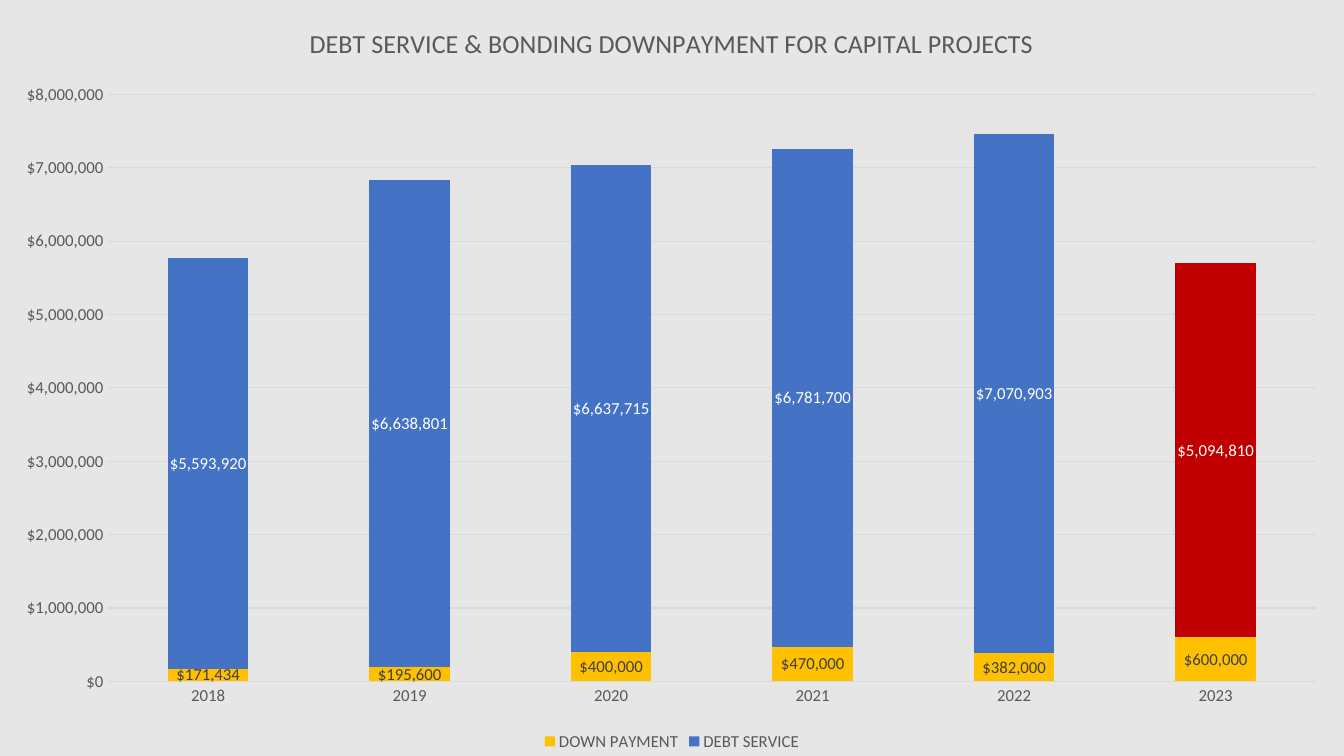
from pptx import Presentation
from pptx import util as u
from pptx.chart.data import CategoryChartData
from pptx.dml.color import RGBColor
from pptx.enum import chart as ch
from pptx.oxml import parse_xml
from pptx.oxml.ns import nsdecls

SCALE = 12192000 / 1344  # EMU in one px
WIDE, HIGH = 1344, 756
GREY, BACK = "595959", "E7E6E6"


def px(n):
    return u.Emu(round(n * SCALE))


def style(font, size, color):
    font.name, font.size, font.bold = "Calibri", u.Pt(size), False
    font.color.rgb = RGBColor.from_string(color)


prs = Presentation()
prs.slide_width, prs.slide_height = px(WIDE), px(HIGH)
slide = prs.slides.add_slide(prs.slide_layouts[6])

# Stacked columns over the whole slide
data = CategoryChartData(number_format='"$"#,##0')
data.categories = ["2018", "2019", "2020", "2021", "2022", "2023"]
data.add_series("DOWN PAYMENT", [171434, 195600, 400000, 470000, 382000, 600000])
data.add_series("DEBT SERVICE", [5593920, 6638801, 6637715, 6781700, 7070903, 5094810])
chart = slide.shapes.add_chart(
    ch.XL_CHART_TYPE.COLUMN_STACKED, 0, 0, px(WIDE), px(HIGH), data).chart
style(chart.font, 10, "000000")

# Title
chart.has_title = True
title = chart.chart_title
title.include_in_layout = False
head = title.text_frame.paragraphs[0]
head.text = "DEBT SERVICE & BONDING DOWNPAYMENT FOR CAPITAL PROJECTS"
style(head.font, 18.6, GREY)

# Legend
chart.has_legend = True
chart.legend.position = ch.XL_LEGEND_POSITION.BOTTOM
chart.legend.include_in_layout = False
style(chart.legend.font, 12, GREY)

# Axes
for axis in (chart.category_axis, chart.value_axis):
    axis.major_tick_mark = axis.minor_tick_mark = ch.XL_TICK_MARK.NONE
    axis.format.line.fill.background()
    style(axis.tick_labels.font, 12, GREY)
scale = chart.value_axis
scale.minimum_scale, scale.maximum_scale, scale.major_unit = 0, 8000000, 1000000
scale.tick_labels.number_format = '"$"#,##0'
scale.tick_labels.number_format_is_linked = False
grid = scale.major_gridlines.format.line
grid.color.rgb = RGBColor.from_string("D9D9D9")
grid.width = u.Pt(0.75)

# Series and their labels
plot = chart.plots[0]
plot.gap_width, plot.overlap, plot.vary_by_categories = 150, 100, False
for series, fill, ink in zip(plot.series, ("FFC000", "4472C4"), ("404040", "FFFFFF")):
    series.format.fill.solid()
    series.format.fill.fore_color.rgb = RGBColor.from_string(fill)
    series.invert_if_negative = False
    labels = series.data_labels
    labels.show_value = True
    labels.position = ch.XL_LABEL_POSITION.CENTER
    style(labels.font, 12, ink)
last = plot.series[1].points[5].format.fill
last.solid()
last.fore_color.rgb = RGBColor.from_string("C00000")

# Background of the chart and of its plot area
paint = f'<a:solidFill><a:srgbClr val="{BACK}"/></a:solidFill>'
props = f'<c:spPr {nsdecls("c", "a")}>{paint}%s</c:spPr>'
root = chart._chartSpace
area = root.chart.plotArea
area.append(parse_xml(props % "<a:ln><a:noFill/></a:ln>"))
root.chart.addnext(parse_xml(props % f'<a:ln w="9525">{paint}</a:ln>'))

# Place of the plot area
for old in area.xpath("c:layout"):
    area.remove(old)
place = {"x": 107 / WIDE, "y": 94 / HIGH, "w": 1210 / WIDE, "h": 588 / HIGH}
modes = '<c:layoutTarget val="inner"/><c:xMode val="edge"/><c:yMode val="edge"/>'
spots = "".join(f'<c:{key} val="{part:.4f}"/>' for key, part in place.items())
area.insert(0, parse_xml(
    f'<c:layout {nsdecls("c")}><c:manualLayout>{modes}{spots}</c:manualLayout></c:layout>'))

prs.save("out.pptx")
